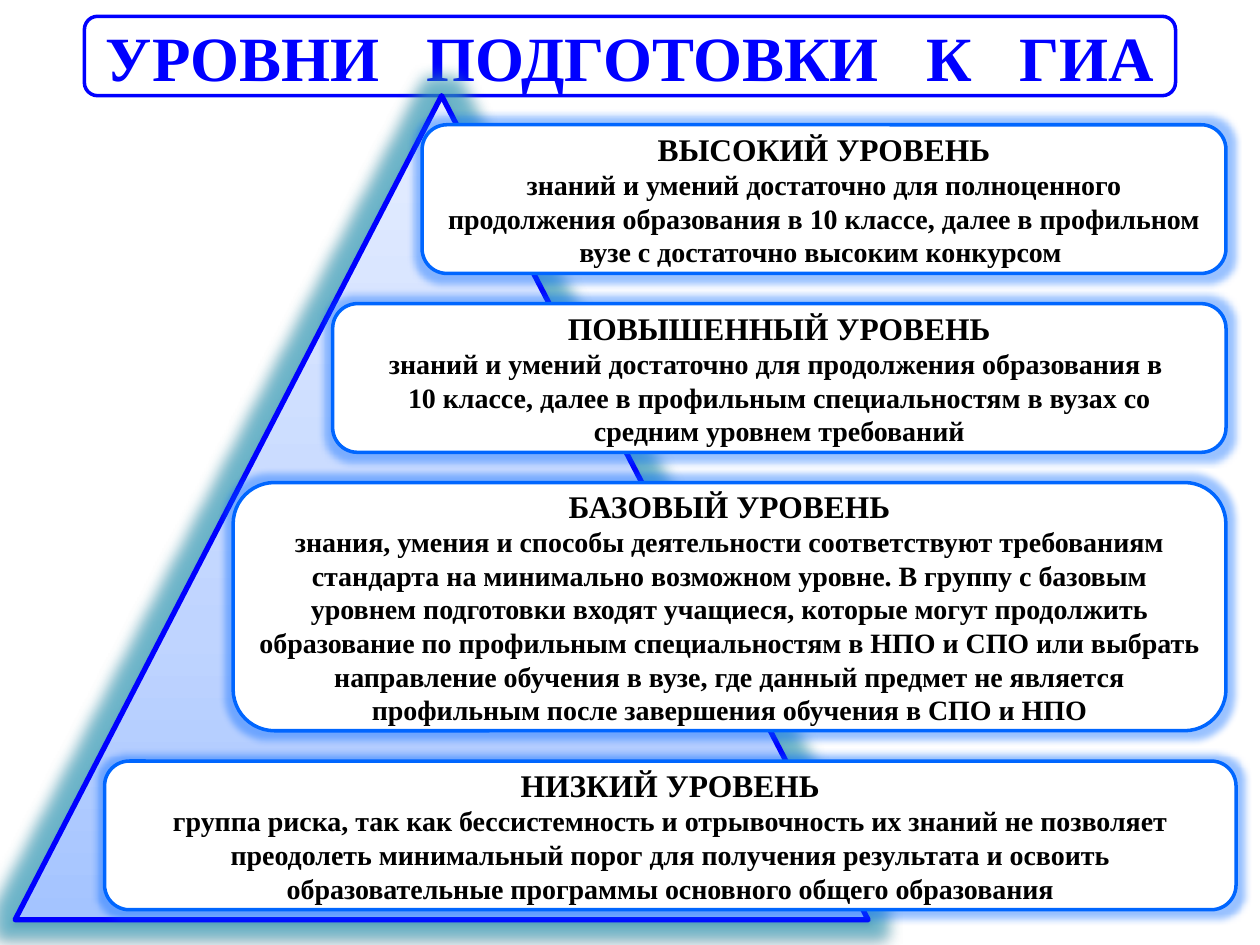
from lxml import etree
from pptx import Presentation
from pptx.dml.color import RGBColor
from pptx.enum.shapes import MSO_SHAPE
from pptx.enum.text import MSO_ANCHOR, PP_ALIGN
from pptx.oxml.ns import qn
from pptx.util import Inches, Pt

ROUNDED = MSO_SHAPE.ROUNDED_RECTANGLE
TRIANGLE = MSO_SHAPE.ISOSCELES_TRIANGLE
MIDDLE = MSO_ANCHOR.MIDDLE
CENTER = PP_ALIGN.CENTER

FONT = "Times New Roman"
COLORS = {
    "title": "0000FF",
    "level_line": "0066FF",
    "level_fill": "FFFFFF",
    "text": "000000",
    "pyramid_glow": "33AACC",
    "shadow": "000000",
}
PYRAMID_STOPS = [(0, "A4C4FF"), (35, "BFD4FF"), (100, "E6EEFF")]

TITLE_WORDS = ["УРОВНИ", "ПОДГОТОВКИ", "К", "ГИА"]
WORD_GAP = 18  # extra points after each title word
LEVEL_GAP = 0.24

# left, width, height, heading, paragraphs
LEVELS = [
    (3.35, 6.38, 1.18, "ВЫСОКИЙ УРОВЕНЬ", [
        "знаний и умений достаточно для полноценного продолжения образования "
        "в 10 классе, далее в профильном вузе с достаточно высоким конкурсом "]),
    (2.64, 7.09, 1.18, "ПОВЫШЕННЫЙ УРОВЕНЬ", [
        "знаний и умений достаточно для продолжения образования в ",
        "10 классе, далее в профильным специальностям в вузах со средним "
        "уровнем требований"]),
    (1.85, 7.88, 1.97, "БАЗОВЫЙ УРОВЕНЬ", [
        "знания, умения и способы деятельности соответствуют требованиям "
        "стандарта на минимально возможном уровне. В группу с базовым уровнем "
        "подготовки входят учащиеся, которые могут продолжить образование по "
        "профильным специальностям в НПО и СПО или выбрать направление "
        "обучения в вузе, где данный предмет не является профильным после "
        "завершения обучения в СПО и НПО"]),
    (0.83, 8.98, 1.18, "НИЗКИЙ УРОВЕНЬ", [
        "группа риска, так как бессистемность и отрывочность их знаний не "
        "позволяет преодолеть минимальный порог для получения результата и "
        "освоить образовательные программы основного общего образования"]),
]


def add_outlined(slide, kind, box, line, width):
    shape = slide.shapes.add_shape(kind, *(Inches(v) for v in box))
    shape.shadow.inherit = False
    shape.fill.background()
    shape.line.color.rgb = RGBColor.from_string(line)
    shape.line.width = Pt(width)
    shape.text_frame.word_wrap = True
    shape.text_frame.vertical_anchor = MIDDLE
    return shape


def add_text(paragraph, text, size, color, spacing=0):
    paragraph.alignment = CENTER
    run = paragraph.add_run()
    run.text = text
    run.font.name = FONT
    run.font.size = Pt(size)
    run.font.bold = True
    run.font.color.rgb = RGBColor.from_string(color)
    if spacing:
        run.font._element.set("spc", str(spacing * 100))


def add_color(parent, color, alpha=100):
    node = etree.SubElement(parent, qn("a:srgbClr"), val=color)
    if alpha < 100:
        etree.SubElement(node, qn("a:alpha"), val=str(alpha * 1000))


def add_glow(shape, color, radius, alpha):
    effects = shape._element.spPr.find(qn("a:effectLst"))
    glow = etree.SubElement(effects, qn("a:glow"), rad=str(Pt(radius)))
    add_color(glow, color, alpha)
    return effects


def draw_title(slide, box):
    title = add_outlined(slide, ROUNDED, box, COLORS["title"], 2)
    paragraph = title.text_frame.paragraphs[0]
    for i, word in enumerate(TITLE_WORDS):
        if i:
            add_text(paragraph, " ", 36, COLORS["title"], spacing=WORD_GAP)
        add_text(paragraph, word, 36, COLORS["title"])


def draw_pyramid(slide, box):
    pyramid = add_outlined(slide, TRIANGLE, box, COLORS["title"], 3)
    # Three-stop gradient, darkest at the base
    pyramid.fill.gradient()
    pyramid.fill.gradient_angle = 90
    stops = next(pyramid._element.spPr.iter(qn("a:gsLst")))
    for stop in list(stops):
        stops.remove(stop)
    for position, color in PYRAMID_STOPS:
        stop = etree.SubElement(stops, qn("a:gs"), pos=str(position * 1000))
        add_color(stop, color)
    # Glow and soft shadow
    effects = add_glow(pyramid, COLORS["pyramid_glow"], 18, 60)
    shadow = etree.SubElement(effects, qn("a:outerShdw"), blurRad=str(Pt(3.1)),
                              dist=str(Pt(1.6)), dir="5400000", rotWithShape="0")
    add_color(shadow, COLORS["shadow"], 38)


def draw_level(slide, box, heading, paragraphs):
    level = add_outlined(slide, ROUNDED, box, COLORS["level_line"], 2)
    level.fill.solid()
    level.fill.fore_color.rgb = RGBColor.from_string(COLORS["level_fill"])
    add_glow(level, COLORS["level_line"], 8, 40)
    frame = level.text_frame
    add_text(frame.paragraphs[0], heading, 18, COLORS["text"])
    for text in paragraphs:
        add_text(frame.add_paragraph(), text, 16, COLORS["text"])


def main():
    prs = Presentation()
    prs.slide_width, prs.slide_height = Inches(10), Inches(7.5)
    slide = prs.slides.add_slide(prs.slide_layouts[6])

    draw_title(slide, (0.67, 0.13, 8.66, 0.63))
    draw_pyramid(slide, (0.12, 0.76, 6.77, 6.54))

    # Levels stacked from top to bottom
    top = 0.99
    for left, width, height, heading, paragraphs in LEVELS:
        draw_level(slide, (left, top, width, height), heading, paragraphs)
        top += height + LEVEL_GAP

    prs.save("out.pptx")


if __name__ == "__main__":
    main()
